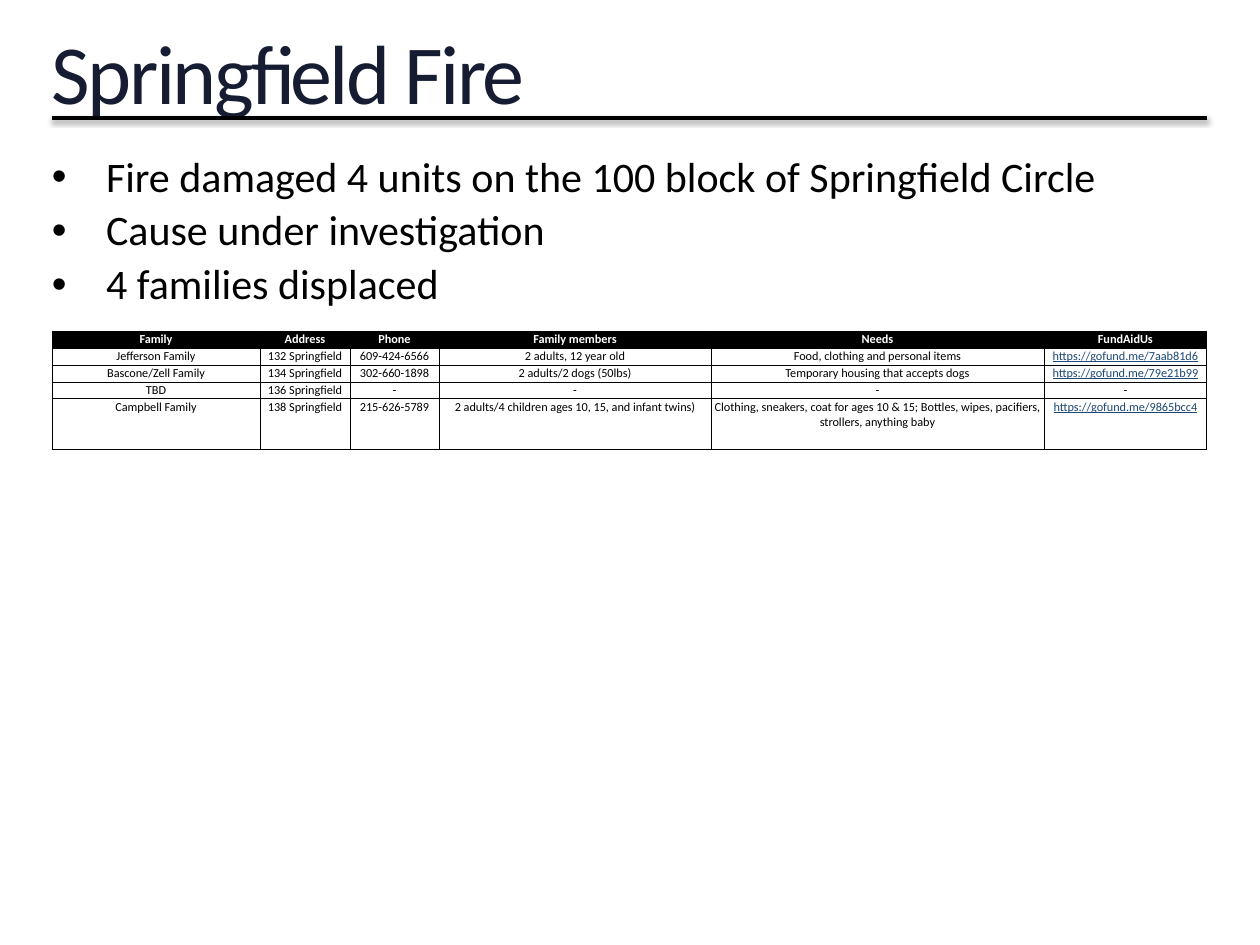
from lxml.etree import SubElement
from pptx import Presentation
from pptx.dml.color import RGBColor
from pptx.enum.shapes import MSO_CONNECTOR
from pptx.enum.text import MSO_ANCHOR, PP_ALIGN
from pptx.oxml.ns import qn
from pptx.util import Emu, Pt

PX_PER_INCH = 126
LEFT, WIDTH = 52, 1155
FONT = "Calibri"
BLACK, WHITE, NAVY, LINK = "000000", "FFFFFF", "161D32", "1D4775"

BULLETS = [
    "Fire damaged 4 units on the 100 block of Springfield Circle",
    "Cause under investigation",
    "4 families displaced",
]
COLUMN_WIDTHS = [208, 90, 89, 272, 333, 163]
ROW_HEIGHTS = [17, 17, 17, 17, 51]
FAMILIES = [
    ["Family", "Address", "Phone", "Family members", "Needs", "FundAidUs"],
    ["Jefferson Family", "132 Springfield", "609-424-6566", "2 adults, 12 year old",
     "Food, clothing and personal items", "https://gofund.me/7aab81d6"],
    ["Bascone/Zell Family", "134 Springfield", "302-660-1898", "2 adults/2 dogs (50lbs)",
     "Temporary housing that accepts dogs", "https://gofund.me/79e21b99"],
    ["TBD", "136 Springfield", "-", "-", "-", "-"],
    ["Campbell Family", "138 Springfield", "215-626-5789",
     "2 adults/4 children ages 10, 15, and infant twins)",
     "Clothing, sneakers, coat for ages 10 & 15; Bottles, wipes, pacifiers, "
     "strollers, anything baby", "https://gofund.me/9865bcc4"],
]


def px(length):
    return Emu(round(length * 914400 / PX_PER_INCH))


def rgb(color):
    return RGBColor.from_string(color)


def write(paragraph, text, size, color=BLACK, bold=False, underline=False,
          align=PP_ALIGN.LEFT, line_spacing=None, before=0, tracking=None):
    paragraph.alignment = align
    paragraph.space_before = Pt(before)
    if line_spacing:
        paragraph.line_spacing = line_spacing
    run = paragraph.add_run()
    run.text = text
    font = run.font
    font.name, font.size = FONT, Pt(size)
    font.bold, font.underline = bold, underline
    font.color.rgb = rgb(color)
    if tracking:
        run._r.get_or_add_rPr().set("spc", str(round(tracking * 100)))


def add_text_frame(slide, top, height):
    frame = slide.shapes.add_textbox(px(LEFT), px(top), px(WIDTH), px(height)).text_frame
    frame.word_wrap = True
    frame.margin_left = frame.margin_right = frame.margin_top = frame.margin_bottom = 0
    return frame


def add_bullet(paragraph, indent):
    properties = paragraph._p.get_or_add_pPr()
    properties.set("marL", str(px(indent)))
    properties.set("indent", str(-px(indent)))
    SubElement(properties, qn("a:buFont"), typeface="Arial")
    SubElement(properties, qn("a:buChar"), char="•")


def add_bullets(slide, top, height):
    frame = add_text_frame(slide, top, height)
    for index, text in enumerate(BULLETS):
        paragraph = frame.add_paragraph() if index else frame.paragraphs[0]
        add_bullet(paragraph, 54)
        write(paragraph, text, 24, line_spacing=0.9, before=4.8 if index else 0)


def add_title_rule(slide, y):
    rule = slide.shapes.add_connector(
        MSO_CONNECTOR.STRAIGHT, px(LEFT), px(y), px(LEFT + WIDTH), px(y))
    rule.line.color.rgb = rgb(BLACK)
    rule.line.width = Pt(2)
    effects = SubElement(rule._element.spPr, qn("a:effectLst"))
    shadow = SubElement(effects, qn("a:outerShdw"), blurRad=str(Pt(3.1)),
                        dist=str(Pt(1.6)), dir="5400000", rotWithShape="0")
    shade = SubElement(shadow, qn("a:srgbClr"), val=BLACK)
    SubElement(shade, qn("a:alpha"), val="38000")


def add_borders(cell):
    properties = cell._tc.get_or_add_tcPr()
    for side in ("lnL", "lnR", "lnT", "lnB"):
        border = SubElement(properties, qn(f"a:{side}"), w=str(Pt(0.5)))
        fill = SubElement(border, qn("a:solidFill"))
        SubElement(fill, qn("a:srgbClr"), val=BLACK)


def fill_cell(cell, text, is_header):
    cell.margin_left = cell.margin_right = cell.margin_top = px(1)
    cell.margin_bottom = 0
    cell.vertical_anchor = MSO_ANCHOR.TOP
    add_borders(cell)
    if is_header:
        cell.fill.solid()
        cell.fill.fore_color.rgb = rgb(BLACK)
    else:
        cell.fill.background()
    is_link = text.startswith("https://")
    color = WHITE if is_header else LINK if is_link else BLACK
    write(cell.text_frame.paragraphs[0], text, 7, color=color, bold=is_header,
          underline=is_link, align=PP_ALIGN.CENTER)


def add_family_table(slide, top):
    table = slide.shapes.add_table(
        len(ROW_HEIGHTS), len(COLUMN_WIDTHS), px(LEFT), px(top),
        px(WIDTH), px(sum(ROW_HEIGHTS))).table
    table.first_row = table.horz_banding = False
    for column, width in zip(table.columns, COLUMN_WIDTHS):
        column.width = px(width)
    for row, height in zip(table.rows, ROW_HEIGHTS):
        row.height = px(height)
    for r, texts in enumerate(FAMILIES):
        for c, text in enumerate(texts):
            fill_cell(table.cell(r, c), text, is_header=r == 0)


def main():
    deck = Presentation()
    deck.slide_width, deck.slide_height = px(1260), px(945)
    slide = deck.slides.add_slide(deck.slide_layouts[6])
    title = add_text_frame(slide, 32, 92)
    write(title.paragraphs[0], "Springfield Fire", 48, color=NAVY,
          line_spacing=0.9, tracking=-1.5)
    add_bullets(slide, 156, 153)
    add_title_rule(slide, 118)
    add_family_table(slide, 331)
    deck.save("out.pptx")


if __name__ == "__main__":
    main()
